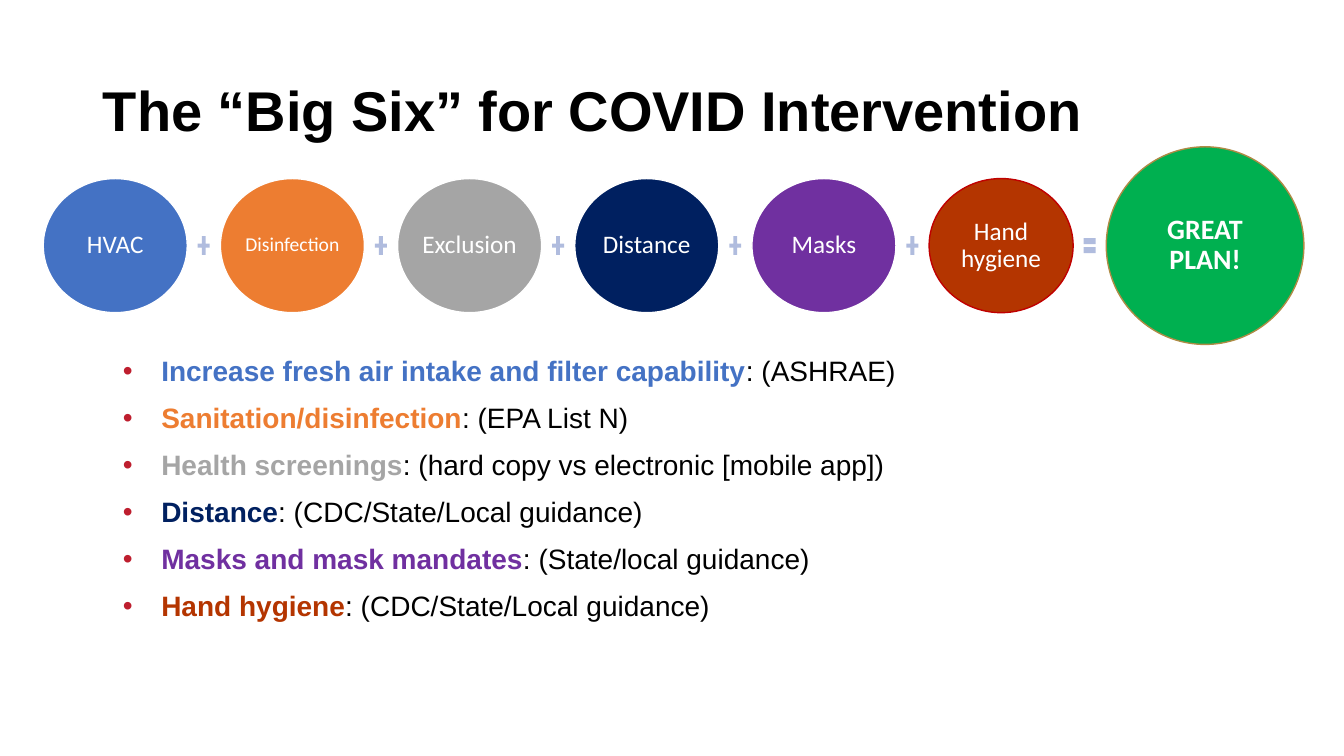
"""Build the slide on the six COVID interventions."""
import pptx
import pptx.dml.color
import pptx.enum.shapes
import pptx.enum.text
import pptx.util
from lxml import etree
from dataclasses import dataclass

Cm = pptx.util.Cm
Pt = pptx.util.Pt
SHAPES = pptx.enum.shapes.MSO_SHAPE
ALIGN = pptx.enum.text.PP_ALIGN

TITLE = "The “Big Six” for COVID Intervention"
INTERVENTIONS = [
    ("HVAC", "Increase fresh air intake and filter capability", ": (ASHRAE)"),
    ("Disinfection", "Sanitation/disinfection", ": (EPA List N)"),
    ("Exclusion", "Health screenings", ": (hard copy vs electronic [mobile app])"),
    ("Distance", "Distance", ": (CDC/State/Local guidance)"),
    ("Masks", "Masks and mask mandates", ": (State/local guidance)"),
    ("Hand hygiene", "Hand hygiene", ": (CDC/State/Local guidance)"),
]
RESULT = "GREAT PLAN!"


@dataclass(frozen=True)
class Theme:
    interventions: tuple = ("4472C4", "ED7D31", "A5A5A5", "002060", "7030A0", "B43500")
    result: str = "00B050"
    result_line: str = "AE8B45"
    last_line: str = "C00000"
    sign: str = "B0BCDE"
    bullet: str = "BE1E2E"
    dark: str = "000000"
    light: str = "FFFFFF"
    heading_font: str = "Arial"
    label_font: str = "Calibri"
    title_size: int = 40
    body_size: int = 20
    label_size: int = 18
    small_label_size: int = 14


THEME = Theme()
ROW_LEFT, ROW_CENTRE, ROW_STEP = 1.09, 6.19, 4.465
CIRCLE_WIDTH, CIRCLE_HEIGHT, RESULT_SIZE = 3.63, 3.38, 4.98
SIGN_WIDTH, SIGN_HEIGHT, SIGN_OFFSET = 0.41, 0.64, 3.84


def rgb(value):
    return pptx.dml.color.RGBColor.from_string(value)


def write(paragraph, text, *, size, color, font=THEME.heading_font, bold=False,
          align=ALIGN.LEFT, spacing=0.9):
    paragraph.alignment = align
    paragraph.line_spacing = spacing
    run = paragraph.add_run()
    run.text = text
    run.font.name = font
    run.font.size = Pt(size)
    run.font.bold = bold
    run.font.color.rgb = rgb(color)


def place(shape, left, top, width, height):
    shape.left, shape.top = Cm(left), Cm(top)
    shape.width, shape.height = Cm(width), Cm(height)


def add_bullet(paragraph):
    properties = paragraph._p.get_or_add_pPr()
    properties.set("marL", str(Cm(1.47)))
    properties.set("indent", str(Cm(-0.97)))
    tag = pptx.oxml.ns.qn
    color = etree.SubElement(properties, tag("a:buClr"))
    etree.SubElement(color, tag("a:srgbClr")).set("val", THEME.bullet)
    etree.SubElement(properties, tag("a:buFont")).set("typeface", "Arial")
    etree.SubElement(properties, tag("a:buChar")).set("char", "•")


def add_row_shape(slide, kind, left, width, height, fill, line=None):
    shape = slide.shapes.add_shape(
        kind, Cm(left), Cm(ROW_CENTRE - height / 2), Cm(width), Cm(height))
    shape.shadow.inherit = False
    shape.fill.solid()
    shape.fill.fore_color.rgb = rgb(fill)
    if line:
        shape.line.color.rgb = rgb(line)
        shape.line.width = Pt(1)
    else:
        shape.line.fill.background()
    return shape


def add_circle(slide, text, left, width, height, fill, line, size, bold=False):
    circle = add_row_shape(slide, SHAPES.OVAL, left, width, height, fill, line)
    frame = circle.text_frame
    frame.word_wrap = True
    frame.vertical_anchor = pptx.enum.text.MSO_ANCHOR.MIDDLE
    frame.margin_left = frame.margin_right = Cm(0.05)
    frame.margin_top = frame.margin_bottom = Cm(0.05)
    write(frame.paragraphs[0], text, size=size, color=THEME.light,
          font=THEME.label_font, bold=bold, align=ALIGN.CENTER)


def add_equation(slide):
    last = len(INTERVENTIONS) - 1
    for index, (label, _, _) in enumerate(INTERVENTIONS):
        left = ROW_LEFT + index * ROW_STEP
        line = THEME.last_line if index == last else THEME.light
        size = THEME.small_label_size if len(label.split()[0]) > 9 else THEME.label_size
        add_circle(slide, label, left, CIRCLE_WIDTH, CIRCLE_HEIGHT,
                   THEME.interventions[index], line, size)
        sign = SHAPES.MATH_EQUAL if index == last else SHAPES.MATH_PLUS
        add_row_shape(slide, sign, left + SIGN_OFFSET, SIGN_WIDTH, SIGN_HEIGHT, THEME.sign)
    add_circle(slide, RESULT, ROW_LEFT + len(INTERVENTIONS) * ROW_STEP, RESULT_SIZE,
               RESULT_SIZE, THEME.result, THEME.result_line, THEME.body_size, bold=True)


def add_text(slide):
    title, body = slide.shapes.title, slide.placeholders[1]
    place(title, 2.34, 1.02, 29.21, 3.68)
    place(body, 2.34, 7.94, 29.21, 10.49)
    for shape in (title, body):
        shape.text_frame.auto_size = pptx.enum.text.MSO_AUTO_SIZE.NONE
        shape.text_frame.word_wrap = True
    title.text_frame.vertical_anchor = pptx.enum.text.MSO_ANCHOR.MIDDLE
    write(title.text_frame.paragraphs[0], TITLE, size=THEME.title_size,
          color=THEME.dark, bold=True)
    frame = body.text_frame
    for index, (_, heading, detail) in enumerate(INTERVENTIONS):
        paragraph = frame.add_paragraph() if index else frame.paragraphs[0]
        add_bullet(paragraph)
        paragraph.space_before = Pt(0)
        spacing = 1.4 if index else 2
        write(paragraph, heading, size=THEME.body_size, bold=True,
              color=THEME.interventions[index], spacing=spacing)
        write(paragraph, detail, size=THEME.body_size, color=THEME.dark, spacing=spacing)


def main():
    presentation = pptx.Presentation()
    presentation.slide_width, presentation.slide_height = Cm(33.87), Cm(19.05)
    slide = presentation.slides.add_slide(presentation.slide_layouts[1])
    add_text(slide)
    add_equation(slide)
    presentation.save("out.pptx")


if __name__ == "__main__":
    main()
